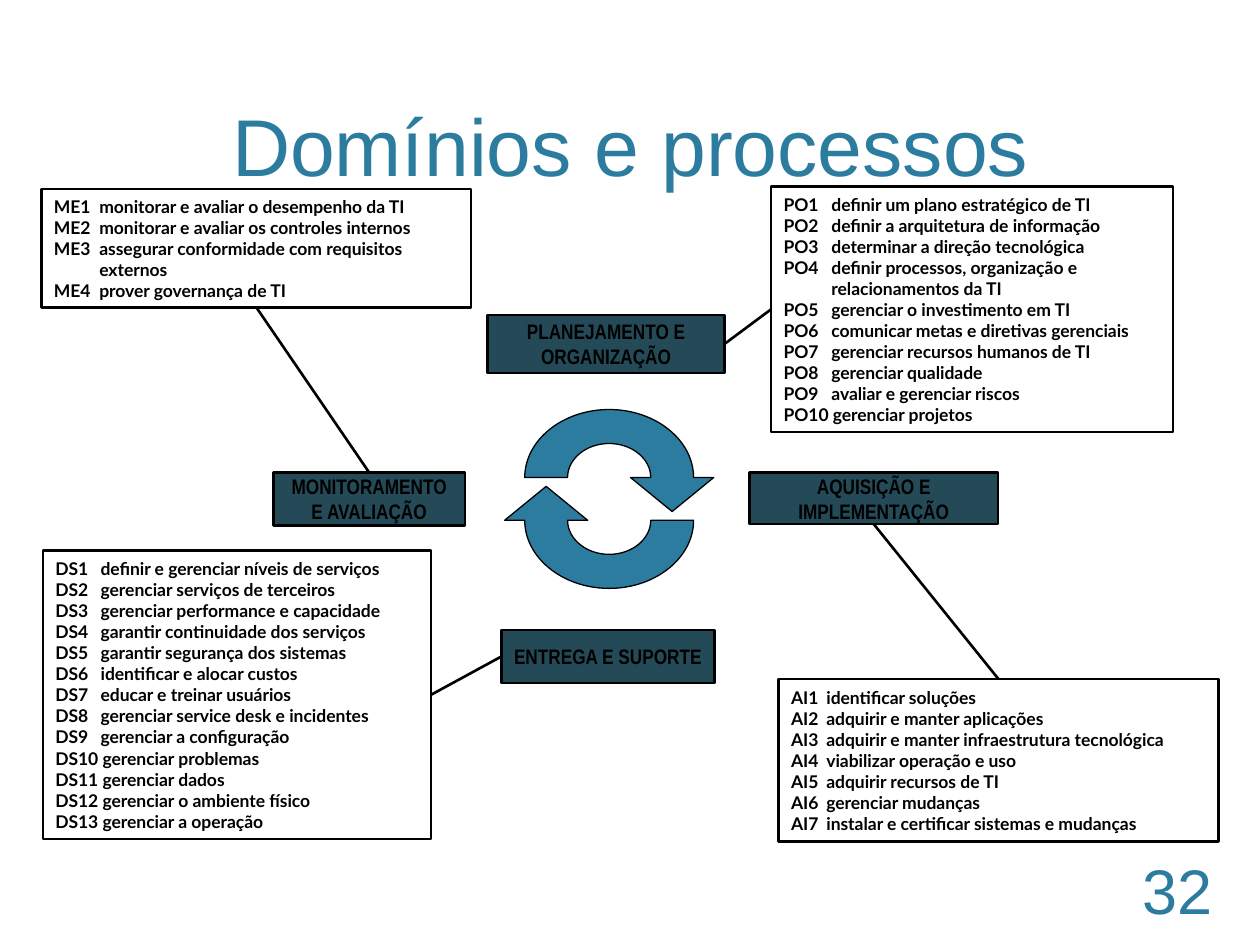
from pptx import Presentation
from pptx import util as u
from pptx.dml.color import RGBColor
from pptx.enum import shapes, text
from pptx.oxml import ns
from lxml import etree

COLORS = {"accent": "2C7C9F", "domain": "244A58", "ink": "000000", "paper": "FFFFFF"}
TOP, LEFT, BOTTOM, RIGHT = range(4)  # connection sites of a rectangle

# Each domain: label lines and box, process prefix, text indent and box,
# then the sites its connector joins (process box, domain box)
DOMAINS = [
    (["ENTREGA E SUPORTE"], (3.98, 5, 1.69, 0.42),
     "DS", 0.36, (0.34, 4.37, 3.08, 2.29), (RIGHT, LEFT),
     ["definir e gerenciar níveis de serviços", "gerenciar serviços de terceiros",
      "gerenciar performance e capacidade", "garantir continuidade dos serviços",
      "garantir segurança dos sistemas", "identificar e alocar custos",
      "educar e treinar usuários", "gerenciar service desk e incidentes",
      "gerenciar a configuração", "gerenciar problemas", "gerenciar dados",
      "gerenciar o ambiente físico", "gerenciar a operação"]),
    (["MONITORAMENTO E AVALIAÇÃO"], (2.17, 3.75, 1.52, 0.42),
     "ME", 0.36, (0.33, 1.5, 3.41, 0.94), (BOTTOM, TOP),
     ["monitorar e avaliar o desempenho da TI",
      "monitorar e avaliar os controles internos",
      "assegurar conformidade com requisitos\n\texternos", "prover governança de TI"]),
    (["PLANEJAMENTO E", "ORGANIZAÇÃO"], (3.87, 2.5, 1.88, 0.46),
     "PO", 0.38, (6.12, 1.48, 3.19, 1.95), (LEFT, RIGHT),
     ["definir um plano estratégico de TI", "definir a arquitetura de informação",
      "determinar a direção tecnológica",
      "definir processos, organização e\vrelacionamentos da TI",
      "gerenciar o investimento em TI", "comunicar metas e diretivas gerenciais",
      "gerenciar recursos humanos de TI", "gerenciar qualidade",
      "avaliar e gerenciar riscos", "gerenciar projetos"]),
    (["AQUISIÇÃO E", "IMPLEMENTAÇÃO"], (5.95, 3.75, 1.97, 0.41),
     "AI", 0.28, (6.18, 5.39, 3.49, 1.29), (TOP, BOTTOM),
     ["identificar soluções", "adquirir e manter aplicações",
      "adquirir e manter infraestrutura tecnológica", "viabilizar operação e uso",
      "adquirir recursos de TI", "gerenciar mudanças",
      "instalar e certificar sistemas e mudanças"]),
]


def color(name):
    return RGBColor.from_string(COLORS[name])


def paint(shape, fill, width):
    shape.shadow.inherit = False
    shape.fill.solid()
    shape.fill.fore_color.rgb = color(fill)
    shape.line.color.rgb = color("ink")
    shape.line.width = u.Pt(width)


def write(shape, lines, font, size, ink, align, bold=False,
          anchor=text.MSO_ANCHOR.MIDDLE):
    frame = shape.text_frame
    frame.word_wrap = True
    frame.vertical_anchor = anchor
    frame.text = "\n".join(lines)
    for paragraph in frame.paragraphs:
        paragraph.alignment = align
        paragraph.font.name = font
        paragraph.font.size = u.Pt(size)
        paragraph.font.bold = bold
        paragraph.font.color.rgb = color(ink)


def add_box(slide, box, fill):
    rect = slide.shapes.add_shape(shapes.MSO_SHAPE.RECTANGLE, *map(u.Inches, box))
    paint(rect, fill, 1.5)
    return rect


def add_process_list(slide, box, prefix, indent, processes):
    panel = add_box(slide, box, "paper")
    # Two-digit codes fill the indent, so a space is enough after them
    lines = [f"{prefix}{number}" + ("\t" if number < 10 else " ") + process
             for number, process in enumerate(processes, 1)]
    write(panel, lines, "Lato", 10, "ink", text.PP_ALIGN.LEFT, bold=True)
    panel.text_frame.auto_size = text.MSO_AUTO_SIZE.SHAPE_TO_FIT_TEXT
    # Hanging indent lines up the process names after their codes
    for paragraph in panel.text_frame.paragraphs:
        properties = paragraph._p.get_or_add_pPr()
        properties.set("marL", str(u.Inches(indent)))
        properties.set("indent", str(-u.Inches(indent)))
    return panel


def add_domain(slide, box, label):
    domain = add_box(slide, box, "domain")
    write(domain, label, "Arial Narrow", 12, "ink", text.PP_ALIGN.CENTER, bold=True)
    return domain


def join(slide, panel, domain, sites):
    link = slide.shapes.add_connector(shapes.MSO_CONNECTOR.STRAIGHT, 0, 0, 0, 0)
    link.begin_connect(panel, sites[0])
    link.end_connect(domain, sites[1])
    link.line.color.rgb = color("ink")
    link.line.width = u.Pt(1.5)
    etree.SubElement(link._element.spPr, ns.qn("a:effectLst"))


def bend(lines):
    """Turn three consecutive line segments into one Bézier curve."""
    curve = etree.Element(ns.qn("a:cubicBezTo"))
    lines[0].addprevious(curve)
    for line in lines:
        curve.append(line[0])
        line.getparent().remove(line)


def add_cycle(slide, box):
    """Two half-ring arrows, each the other turned by 180 degrees."""
    left, top, width, height = box
    middle_x, middle_y = left + width / 2, top + height / 2
    rise, pull = 0.17, 0.55

    def half_ring(x, y):
        """Half ellipse from x to -x: start, then two curves of three points."""
        return [(px, -rise - py) for px, py in (
            (x, 0), (x, pull * y), (pull * x, y), (0, y),
            (-pull * x, y), (-x, pull * y), (-x, 0))]

    outline = half_ring(0.33, 0.27) + half_ring(-0.67, 0.54)
    outline += [(0.83, -rise), (0.5, 0.1), (0.17, -rise)]
    for turn in (1, -1):
        points = [(u.Inches(middle_x + turn * x), u.Inches(middle_y + turn * y))
                  for x, y in outline]
        builder = slide.shapes.build_freeform(*points[0])
        builder.add_line_segments(points[1:], close=True)
        arrow = builder.convert_to_shape()
        segments = list(arrow._element.iter(ns.qn("a:lnTo")))
        for first in (0, 3, 7, 10):
            bend(segments[first:first + 3])
        paint(arrow, "accent", 0.75)


def add_heading(slide, box, words, size, align, anchor):
    heading = slide.shapes.add_textbox(*map(u.Inches, box))
    write(heading, [words], "Arial", size, "accent", align, anchor=anchor)


def main():
    deck = Presentation()
    deck.slide_width, deck.slide_height = u.Inches(10), u.Inches(7.5)
    slide = deck.slides.add_slide(deck.slide_layouts[6])

    # Process lists, then domains
    panels = [add_process_list(slide, list_box, prefix, indent, processes)
              for _, _, prefix, indent, list_box, _, processes in DOMAINS]
    domains = [add_domain(slide, box, label) for label, box, *_ in DOMAINS]

    # Title and slide number
    add_heading(slide, (0.6, 0.12, 8.8, 1.46), "Domínios e processos", 46,
                text.PP_ALIGN.CENTER, text.MSO_ANCHOR.BOTTOM)
    add_heading(slide, (8.64, 6.86, 1.08, 0.4), "32", 36,
                text.PP_ALIGN.RIGHT, text.MSO_ANCHOR.MIDDLE)

    # Cycle in the centre
    add_cycle(slide, (4, 3.25, 1.67, 1.42))

    # Connectors between lists and domains
    for panel, domain, entry in zip(panels, domains, DOMAINS):
        join(slide, panel, domain, entry[5])

    deck.save("out.pptx")


if __name__ == "__main__":
    main()
